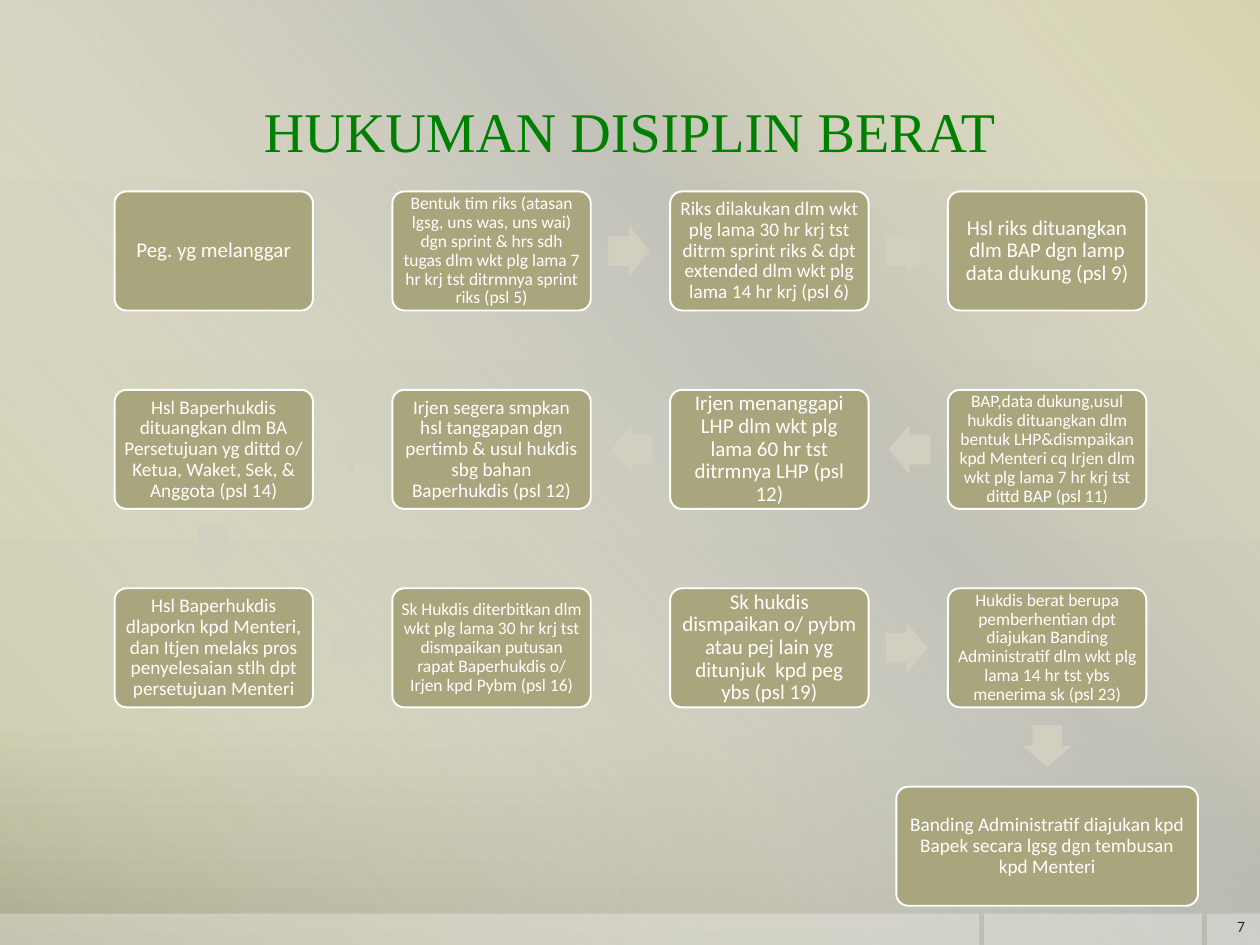
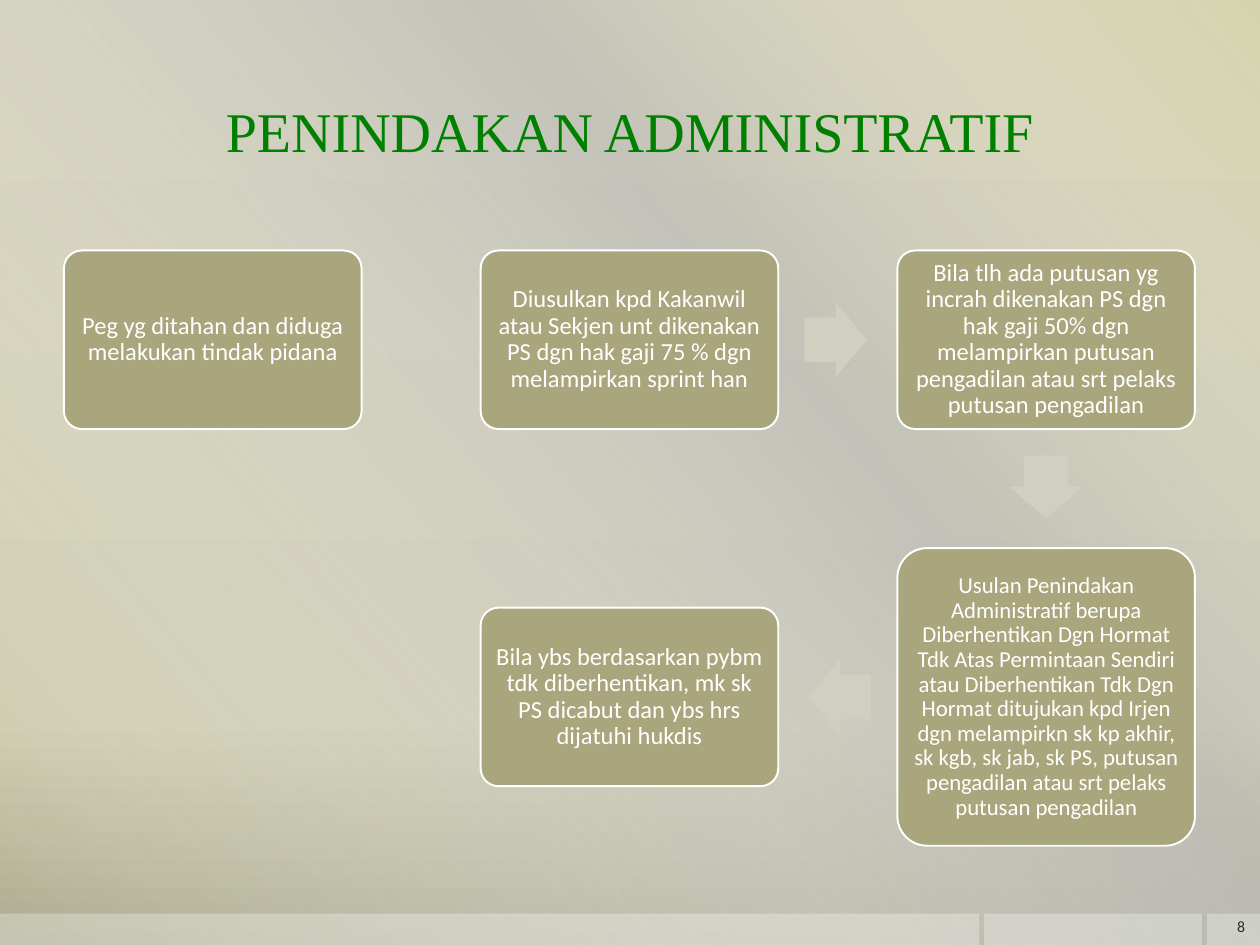
from dataclasses import dataclass
from itertools import pairwise

from lxml.etree import SubElement
from pptx import Presentation
from pptx.dml.color import RGBColor
from pptx.enum.shapes import MSO_SHAPE as SHAPE
from pptx.enum.text import MSO_ANCHOR as ANCHOR, MSO_AUTO_SIZE as AUTO_SIZE, PP_ALIGN as ALIGN
from pptx.oxml.ns import qn
from pptx.util import Cm, Pt

SLIDE_W, SLIDE_H = 25.4, 19.05
TITLE_ONLY = 5
COLORS = {
    "title": "008000",
    "box": "A9A57C",
    "arrow": "D1CFBF",
    "white": "FFFFFF",
    "number": "2F2B20",
}
BODY_FONT, TITLE_FONT = "Calibri", "Times New Roman"

# Gradient stops: position, colour, opacity (all in percent)
BACKGROUND = [(0, "D5D2AE", 100), (76, "CCCAAA", 100), (100, "ACAA8D", 100)]
SHEEN = [(0, "FFFFFF", 0), (34, "BFBFBF", 61), (38, "BFBFBF", 76), (100, "FFFFFF", 0)]
BANDS = [(0, 19.74), (19.84, 4.39), (24.33, 1.07)]  # left, width
BAND_TOP, BAND_H = 18.42, 0.63


@dataclass
class Grid:
    """Cells of a flow, in centimetres; boxes are centred in their cells."""
    left: float
    top: float
    box_w: float
    box_h: float
    pitch_x: float
    pitch_y: float


@dataclass
class Step:
    col: int
    row: int
    size: int
    text: str
    w: float = 0  # 0 means the usual box size of the grid
    h: float = 0


SEVERE_GRID = Grid(2.31, 3.86, 4, 2.4, 5.6, 4)
SEVERE_STEPS = [
    Step(0, 0, 12, "Peg. yg melanggar"),
    Step(1, 0, 10, "Bentuk tim riks (atasan lgsg, uns was, uns wai) dgn sprint & hrs sdh "
                   "tugas dlm wkt plg lama 7 hr krj tst ditrmnya sprint riks (psl 5)"),
    Step(2, 0, 11, "Riks dilakukan dlm wkt plg lama 30 hr krj tst ditrm sprint riks & dpt "
                   "extended dlm wkt plg lama 14 hr krj (psl 6)"),
    Step(3, 0, 12, "Hsl riks dituangkan dlm BAP dgn lamp data dukung (psl 9)"),
    Step(3, 1, 10, "BAP,data dukung,usul hukdis dituangkan dlm bentuk LHP&dismpaikan kpd "
                   "Menteri cq Irjen dlm wkt plg lama 7 hr krj tst dittd BAP (psl 11)"),
    Step(2, 1, 12, "Irjen menanggapi LHP dlm wkt plg lama 60 hr tst ditrmnya LHP (psl 12)"),
    Step(1, 1, 11, "Irjen segera smpkan hsl tanggapan dgn pertimb & usul hukdis sbg bahan "
                   "Baperhukdis (psl 12)"),
    Step(0, 1, 11, "Hsl Baperhukdis dituangkan dlm BA Persetujuan yg dittd o/ Ketua, Waket, "
                   "Sek, & Anggota (psl 14)"),
    Step(0, 2, 11, "Hsl Baperhukdis dlaporkn kpd Menteri, dan Itjen melaks pros penyelesaian "
                   "stlh dpt persetujuan Menteri"),
    Step(1, 2, 10, "Sk Hukdis diterbitkan dlm wkt plg lama 30 hr krj tst dismpaikan putusan "
                   "rapat Baperhukdis o/ Irjen kpd Pybm (psl 16)"),
    Step(2, 2, 12, "Sk hukdis dismpaikan o/ pybm atau pej lain yg ditunjuk  kpd peg ybs (psl 19)"),
    Step(3, 2, 10, "Hukdis berat berupa pemberhentian dpt diajukan Banding Administratif dlm "
                   "wkt plg lama 14 hr tst ybs menerima sk (psl 23)"),
    Step(3, 3, 11, "Banding Administratif diajukan kpd Bapek secara lgsg dgn tembusan kpd "
                   "Menteri", w=6.08),
]

ADMIN_GRID = Grid(1.29, 5.05, 6, 3.6, 8.4, 7.2)
ADMIN_STEPS = [
    Step(0, 0, 14, "Peg yg ditahan dan diduga melakukan tindak pidana"),
    Step(1, 0, 14, "Diusulkan kpd Kakanwil atau Sekjen unt dikenakan PS dgn hak gaji 75 % dgn "
                   "melampirkan sprint han"),
    Step(2, 0, 14, "Bila tlh ada putusan yg incrah dikenakan PS dgn hak gaji 50% dgn "
                   "melampirkan putusan pengadilan atau srt pelaks putusan pengadilan"),
    Step(2, 1, 13, "Usulan Penindakan Administratif berupa Diberhentikan Dgn Hormat Tdk Atas "
                   "Permintaan Sendiri atau Diberhentikan Tdk Dgn Hormat ditujukan kpd Irjen "
                   "dgn melampirkn sk kp akhir, sk kgb, sk jab, sk PS, putusan pengadilan atau "
                   "srt pelaks putusan pengadilan", h=6),
    Step(1, 1, 14, "Bila ybs berdasarkan pybm tdk diberhentikan, mk sk PS dicabut dan ybs hrs "
                   "dijatuhi hukdis"),
]


def rgb(name):
    return RGBColor.from_string(COLORS[name])


def set_gradient(fill, element, stops, angle):
    """Give the fill held by element several stops, with opacity."""
    fill.gradient()
    grad = element.xpath(".//a:gradFill")[0]
    for child in list(grad):
        grad.remove(child)
    gs_list = SubElement(grad, qn("a:gsLst"))
    for pos, color, opacity in stops:
        gs = SubElement(gs_list, qn("a:gs"), pos=str(pos * 1000))
        clr = SubElement(gs, qn("a:srgbClr"), val=color)
        SubElement(clr, qn("a:alpha"), val=str(opacity * 1000))
    SubElement(grad, qn("a:lin"), ang=str(angle * 60000), scaled="0")


def add_plain(shapes, kind, x, y, w, h, fill="white"):
    s = shapes.add_shape(kind, Cm(x), Cm(y), Cm(w), Cm(h))
    s.shadow.inherit = False
    s.fill.solid()
    s.fill.fore_color.rgb = rgb(fill)
    s.line.fill.background()
    return s


def style_text(tf, size, font, color, align):
    tf.word_wrap = True
    tf.auto_size = AUTO_SIZE.NONE
    tf.vertical_anchor = ANCHOR.MIDDLE
    p = tf.paragraphs[0]
    p.alignment = align
    r = p.runs[0]
    r.font.size = Pt(size)
    r.font.name = font
    r.font.color.rgb = rgb(color)


def decorate_layout(layout, slide):
    """Draw the sheen and footer bands on slide, then move them to its layout."""
    set_gradient(layout.background.fill, layout.element, BACKGROUND, 90)
    sheen = add_plain(slide.shapes, SHAPE.RECTANGLE, 0, 0, SLIDE_W, SLIDE_H)
    set_gradient(sheen.fill, sheen.element, SHEEN, 140)
    decor = [sheen]
    for x, w in BANDS:
        band = add_plain(slide.shapes, SHAPE.RECTANGLE, x, BAND_TOP, w, BAND_H)
        clr = band.element.xpath("./p:spPr/a:solidFill/a:srgbClr")[0]
        SubElement(clr, qn("a:alpha"), val="30000")
        decor.append(band)
    tree = layout.element.xpath("./p:cSld/p:spTree")[0]
    for i, s in enumerate(decor, 2):
        tree.insert(i, s.element)


def set_title(slide, text):
    s = slide.shapes.title
    s.left, s.top, s.width, s.height = Cm(1.27), Cm(1.47), Cm(22.86), Cm(2.29)
    tf = s.text_frame
    tf.text = text
    tf.margin_left = tf.margin_right = 0
    style_text(tf, 32, TITLE_FONT, "title", ALIGN.CENTER)


def add_number(slide, number):
    s = slide.shapes.add_textbox(Cm(24.28), Cm(18.36), Cm(1.07), Cm(BAND_H))
    s.text_frame.text = str(number)
    style_text(s.text_frame, 9, BODY_FONT, "number", ALIGN.RIGHT)


def box_rect(grid, step):
    w, h = step.w or grid.box_w, step.h or grid.box_h
    x = grid.left + step.col * grid.pitch_x + (grid.box_w - w) / 2
    y = grid.top + step.row * grid.pitch_y + (grid.box_h - h) / 2
    return x, y, w, h


def add_box(slide, grid, step):
    s = add_plain(slide.shapes, SHAPE.ROUNDED_RECTANGLE, *box_rect(grid, step), "box")
    s.adjustments[0] = 0.1
    s.line.color.rgb = rgb("white")
    s.line.width = Pt(1.1)
    tf = s.text_frame
    tf.text = step.text
    tf.margin_left = tf.margin_right = tf.margin_top = tf.margin_bottom = Pt(0.3 * step.size)
    style_text(tf, step.size, BODY_FONT, "white", ALIGN.CENTER)
    tf.paragraphs[0].line_spacing = 0.9


def add_arrow(slide, grid, start, end):
    """Put an arrow in the gap between two neighbouring boxes."""
    x1, y1, w1, h1 = box_rect(grid, start)
    x2, y2, w2, h2 = box_rect(grid, end)
    back = 0.0065 * grid.box_w  # arrows sit slightly nearer the box they leave
    if start.row == end.row:
        direction = end.col - start.col
        cx = (max(x1, x2) + min(x1 + w1, x2 + w2)) / 2 - direction * back
        cy = y1 + h1 / 2
        angle = 0 if direction > 0 else 180
    else:
        cx = x1 + w1 / 2
        cy = (y1 + h1 + y2) / 2 - back
        angle = 90
    w, h = 0.21 * grid.box_w, 0.25 * grid.box_w
    s = add_plain(slide.shapes, SHAPE.RIGHT_ARROW, cx - w / 2, cy - h / 2, w, h, "arrow")
    s.adjustments[0], s.adjustments[1] = 0.6, 0.5
    s.rotation = angle


def add_flow(slide, grid, steps):
    for step in steps:
        add_box(slide, grid, step)
    for start, end in pairwise(steps):
        # The first step stands apart: its arrow is lost in the background
        add_arrow(slide, grid, start, end)


def main():
    prs = Presentation()
    prs.slide_width, prs.slide_height = Cm(SLIDE_W), Cm(SLIDE_H)
    layout = prs.slide_layouts[TITLE_ONLY]
    pages = [
        ("HUKUMAN DISIPLIN BERAT", SEVERE_GRID, SEVERE_STEPS),
        ("PENINDAKAN ADMINISTRATIF", ADMIN_GRID, ADMIN_STEPS),
    ]
    for number, (title, grid, steps) in enumerate(pages, 7):
        slide = prs.slides.add_slide(layout)
        if number == 7:
            decorate_layout(layout, slide)
        set_title(slide, title)
        add_flow(slide, grid, steps)
        add_number(slide, number)
    prs.save("out.pptx")


if __name__ == "__main__":
    main()
